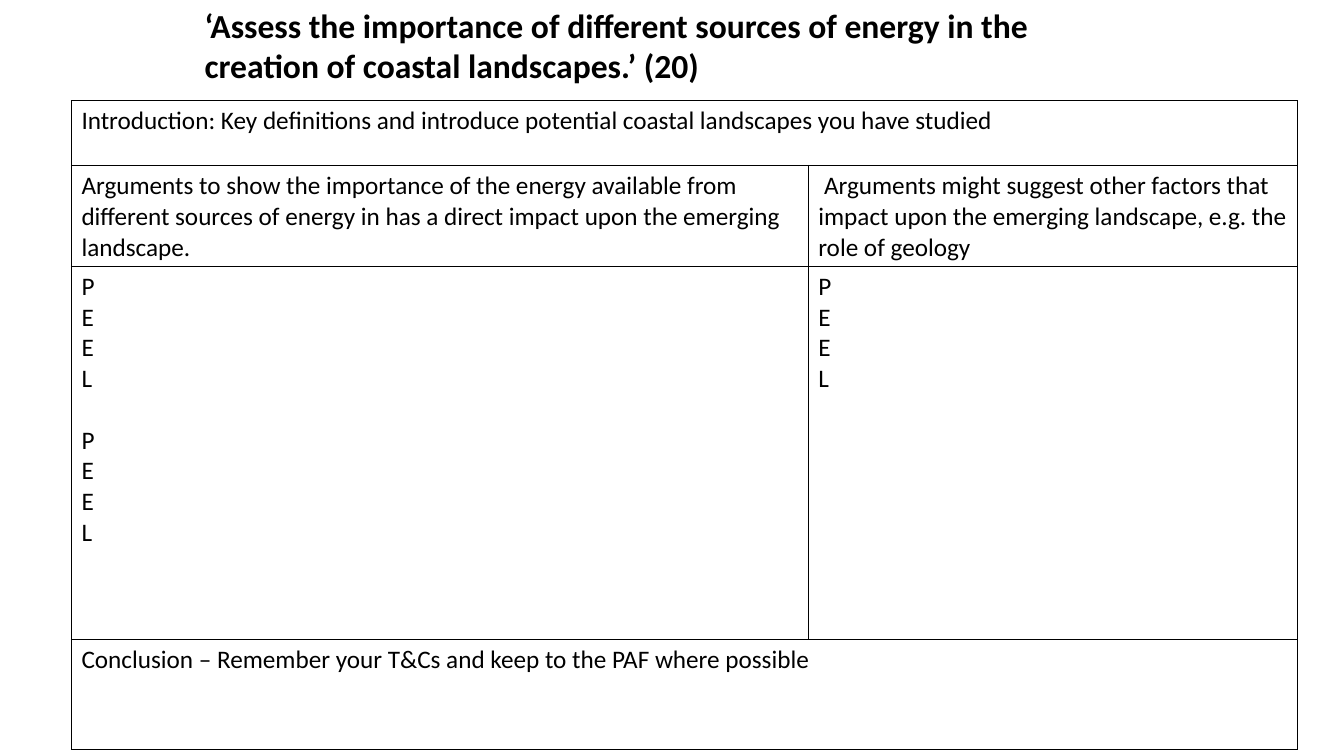
from lxml import etree
from pptx import Presentation
from pptx import util as u
from pptx.dml.color import RGBColor
from pptx.enum import text
from pptx.oxml import ns

# Content
QUESTION = "‘Assess the importance of different sources of energy in the creation of coastal landscapes.’ (20)"
PEEL = ["P", "E", "E", "L"]
# Each row is a list of cells, each cell a list of paragraph groups;
# a row with a single cell spans the table
ESSAY_PLAN = [
    [[["Introduction: Key definitions and introduce potential coastal landscapes you have studied"]]],
    [
        [["Arguments to show the importance of the energy available from different sources "
          "of energy in has a direct impact upon the emerging landscape."]],
        [[" Arguments might suggest other factors that impact upon the emerging landscape, "
          "e.g. the role of geology"]],
    ],
    [[PEEL, PEEL], [PEEL]],
    [[["Conclusion – Remember your T&Cs and keep to the PAF where possible"]]],
]

# Layout in centimetres
SLIDE_SIZE = (33.87, 19.05)
QUESTION_BOX = (4.9, 0, 24.05, 2.31)
PLAN_CORNER = (1.8, 2.54)
COLUMN_WIDTHS = [18.57, 12.32]
ROW_HEIGHTS = [1.63, 2.54, 9.4, 2.77]

THEME = {
    "font": "Calibri",
    "ink": "000000",
    "question_size": u.Pt(24),
    "plan_size": u.Pt(18),
    "group_gap": u.Pt(22),
    "border": u.Pt(1),
}


def write(paragraph, words, size, bold=False):
    paragraph.alignment = text.PP_ALIGN.LEFT
    run = paragraph.add_run()
    run.text = words
    run.font.name = THEME["font"]
    run.font.size = size
    run.font.bold = bold
    run.font.color.rgb = RGBColor.from_string(THEME["ink"])


def add_borders(cell):
    properties = cell._tc.get_or_add_tcPr()
    for side in ("a:lnL", "a:lnR", "a:lnT", "a:lnB"):
        line = etree.SubElement(properties, ns.qn(side), w=str(THEME["border"]))
        fill = etree.SubElement(line, ns.qn("a:solidFill"))
        etree.SubElement(fill, ns.qn("a:srgbClr"), val=THEME["ink"])


def write_groups(frame, groups):
    paragraph = frame.paragraphs[0]
    for group_index, group in enumerate(groups):
        for line_index, words in enumerate(group):
            if group_index or line_index:
                paragraph = frame.add_paragraph()
            if group_index and not line_index:
                paragraph.space_before = THEME["group_gap"]
            write(paragraph, words, THEME["plan_size"])


def main():
    deck = Presentation()
    deck.slide_width, deck.slide_height = map(u.Cm, SLIDE_SIZE)
    slide = deck.slides.add_slide(deck.slide_layouts[5])

    # Essay question
    question = slide.shapes.title
    question.left, question.top, question.width, question.height = map(u.Cm, QUESTION_BOX)
    frame = question.text_frame
    frame.word_wrap = True
    frame.auto_size = text.MSO_AUTO_SIZE.SHAPE_TO_FIT_TEXT
    frame.vertical_anchor = text.MSO_ANCHOR.TOP
    write(frame.paragraphs[0], QUESTION, THEME["question_size"], bold=True)

    # Essay plan grid
    plan = slide.shapes.add_table(
        len(ROW_HEIGHTS), len(COLUMN_WIDTHS), *map(u.Cm, PLAN_CORNER),
        u.Cm(sum(COLUMN_WIDTHS)), u.Cm(sum(ROW_HEIGHTS))).table
    plan.first_row = plan.horz_banding = False
    for column, width in zip(plan.columns, COLUMN_WIDTHS):
        column.width = u.Cm(width)
    for row, height in zip(plan.rows, ROW_HEIGHTS):
        row.height = u.Cm(height)
    for cell in plan.iter_cells():
        add_borders(cell)
        cell.fill.background()

    # Essay plan wording
    last_column = len(COLUMN_WIDTHS) - 1
    for row_index, sections in enumerate(ESSAY_PLAN):
        if len(sections) == 1:
            plan.cell(row_index, 0).merge(plan.cell(row_index, last_column))
        for column_index, groups in enumerate(sections):
            write_groups(plan.cell(row_index, column_index).text_frame, groups)

    deck.save("out.pptx")


if __name__ == "__main__":
    main()
